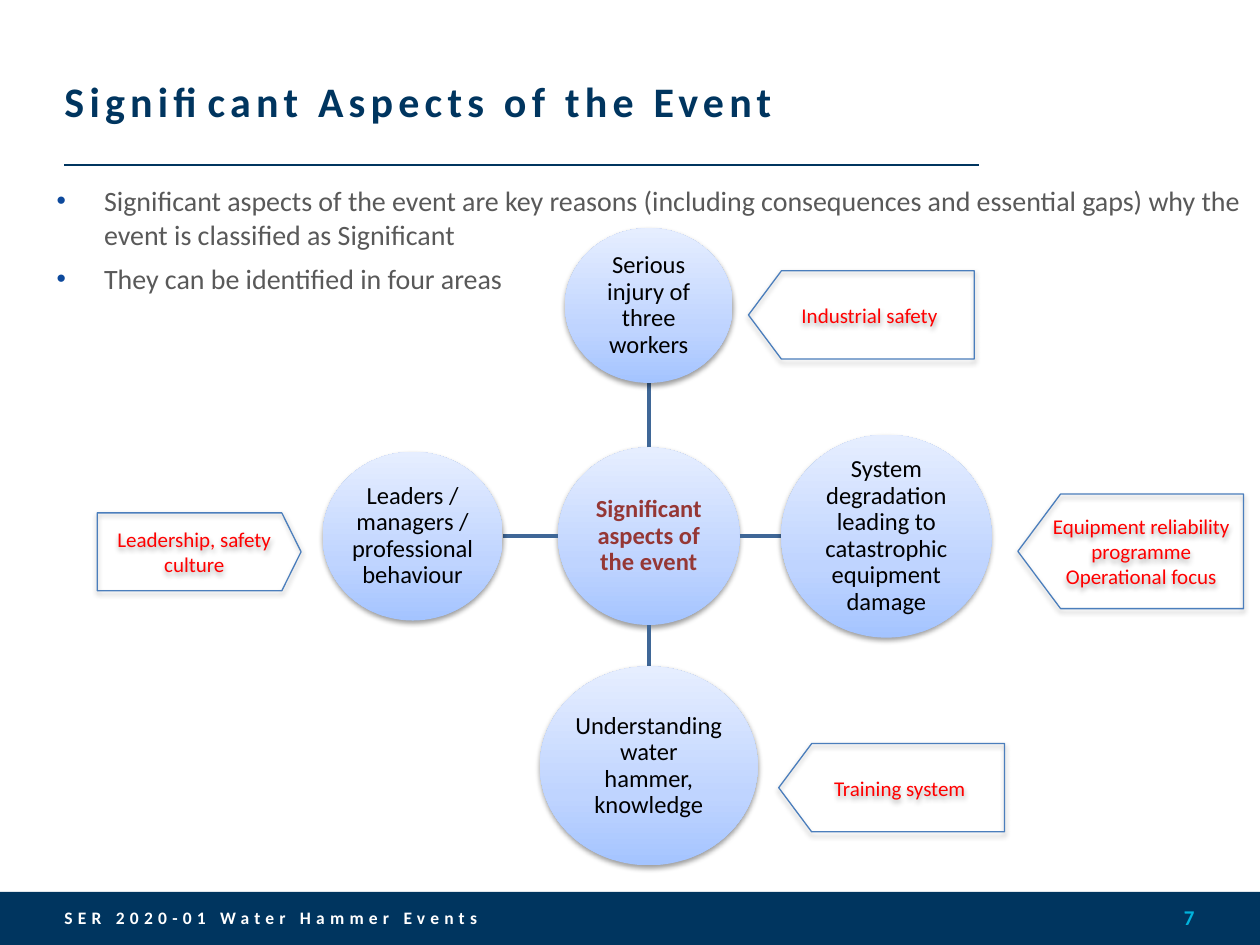
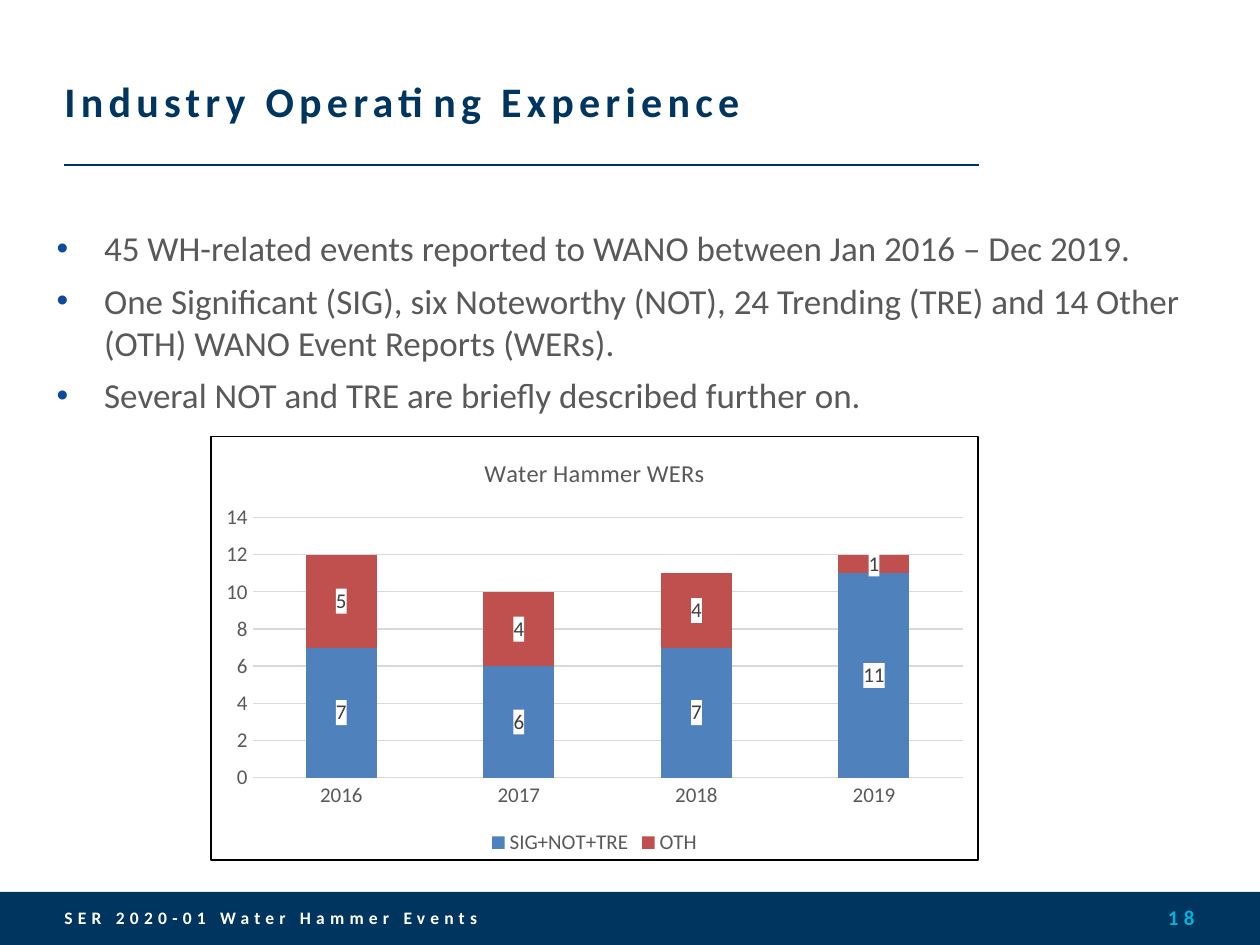
from copy import deepcopy
from dataclasses import dataclass
from math import copysign

from pptx import Presentation
from pptx.chart.data import CategoryChartData
from pptx.dml.color import RGBColor
from pptx.enum.chart import XL_CHART_TYPE, XL_LEGEND_POSITION, XL_TICK_MARK
from pptx.enum.shapes import MSO_CONNECTOR, MSO_SHAPE
from pptx.enum.text import MSO_ANCHOR, PP_ALIGN
from pptx.oxml import parse_xml
from pptx.oxml.ns import nsdecls, qn
from pptx.util import Cm, Pt


@dataclass(frozen=True)
class Style:
    size: float
    ink: str
    bold: bool = False
    track: int = 0
    align: PP_ALIGN = PP_ALIGN.LEFT


@dataclass(frozen=True)
class Theme:
    face: str = "Calibri"
    navy: str = "00355F"
    white: str = "FFFFFF"
    black: str = "000000"
    dot: str = "0D499C"
    spoke: str = "3F6797"
    edge: str = "4B7EBC"
    grid: str = "D9D9D9"
    bars: tuple = ("4F81BD", "C0504D")
    ramp: tuple = ((0, "A4C4FF"), (0.35, "BFD4FF"), (1, "E6EEFF"))
    title: Style = Style(24, "00355F", True, 300)
    foot: Style = Style(10, "FFFFFF", True, 300)
    page: Style = Style(12, "00B3DC", True, 300, PP_ALIGN.RIGHT)
    small: Style = Style(16, "595959")
    large: Style = Style(20, "595959")
    hub: Style = Style(14, "953735", True, align=PP_ALIGN.CENTER)
    node: Style = Style(14, "000000", align=PP_ALIGN.CENTER)
    tag: Style = Style(12, "FF0000", align=PP_ALIGN.CENTER)
    head: Style = Style(14, "595959")
    axis: Style = Style(12, "595959")
    value: Style = Style(12, "404040")


THEME = Theme()


@dataclass(frozen=True)
class Box:
    """Left, top, width and height in centimetres."""
    x: float
    y: float
    w: float
    h: float

    def place(self) -> tuple:
        return Cm(self.x), Cm(self.y), Cm(self.w), Cm(self.h)


@dataclass(frozen=True)
class Node:
    """Circle given by its centre and size in centimetres."""
    text: str
    x: float
    y: float
    w: float
    h: float


@dataclass(frozen=True)
class Tag:
    box: Box
    lines: tuple
    point: float = 0.373
    left: bool = True


FOOT = "SER 2020-01 Water Hammer Events"
BAND = Box(0, 17.98, 25.4, 1.07)

HUB = Node("Significant aspects of the event", 13.08, 10.81, 3.66, 3.58)
NODES = (
    Node("Serious injury of three workers", 13.08, 6.16, 3.38, 3.12),
    Node("System degradation leading to catastrophic equipment damage",
         17.87, 10.81, 4.24, 4.09),
    Node("Understanding water hammer, knowledge", 13.08, 15.44, 4.39, 4.01),
    Node("Leaders / managers / professional behaviour", 8.32, 10.81, 3.63, 3.4),
)
TAGS = (
    Tag(Box(15.09, 5.46, 4.55, 1.78), ("Industrial safety",)),
    Tag(Box(20.52, 9.96, 4.55, 2.31),
        ("Equipment reliability programme", "Operational focus")),
    Tag(Box(15.7, 14.99, 4.55, 1.78), ("Training system",)),
    Tag(Box(1.96, 10.34, 4.11, 1.57), ("Leadership, safety culture",), 0.247, False),
)
ASPECTS = (
    "Significant aspects of the event are key reasons (including consequences "
    "and essential gaps) why the event is classified as Significant",
    "They can be identified in four areas",
)
EVENTS = (
    "45 WH-related events reported to WANO between Jan 2016 – Dec 2019.",
    "One Significant (SIG), six Noteworthy (NOT), 24 Trending (TRE) and "
    "14 Other (OTH) WANO Event Reports (WERs).",
    "Several NOT and TRE are briefly described further on.",
)
YEARS = ("2016", "2017", "2018", "2019")
COUNTS = {"SIG+NOT+TRE": (7, 6, 7, 11), "OTH": (5, 4, 4, 1)}


def tint(code: str) -> RGBColor:
    return RGBColor.from_string(code)


def set_font(font, style: Style) -> None:
    font.name = THEME.face
    font.size = Pt(style.size)
    font.bold = style.bold
    font.color.rgb = tint(style.ink)


def write(frame, lines: tuple, style: Style, inset: float | None = 0) -> None:
    """Fill a text frame; an inset of None keeps the usual margins."""
    frame.word_wrap = True
    frame.vertical_anchor = MSO_ANCHOR.MIDDLE
    if inset is not None:
        frame.margin_left = frame.margin_right = Cm(inset)
        frame.margin_top = frame.margin_bottom = Cm(inset)
    frame.text = "\n".join(lines)
    for para in frame.paragraphs:
        para.alignment = style.align
        for run in para.runs:
            set_font(run.font, style)
            if style.track:
                run.font._element.set("spc", str(style.track))


def add_text(slide, box: Box, lines: tuple, style: Style):
    frame = slide.shapes.add_textbox(*box.place()).text_frame
    write(frame, lines, style)
    return frame


def add_list(slide, box: Box, lines: tuple, style: Style) -> None:
    frame = add_text(slide, box, lines, style)
    frame.vertical_anchor = MSO_ANCHOR.TOP
    for rank, para in enumerate(frame.paragraphs):
        props = para._p.get_or_add_pPr()
        props.set("marL", str(Cm(0.96)))
        props.set("indent", str(-Cm(0.96)))
        for mark in (
            f'<a:buClr {nsdecls("a")}><a:srgbClr val="{THEME.dot}"/></a:buClr>',
            f'<a:buSzPct {nsdecls("a")} val="95000"/>',
            f'<a:buFont {nsdecls("a")} typeface="Arial"/>',
            f'<a:buChar {nsdecls("a")} char="•"/>',
        ):
            props.append(parse_xml(mark))
        para.space_before = Pt(3 if rank else 0)
        para.space_after = Pt(3)


def add_line(slide, start: tuple, end: tuple, code: str, width: float) -> None:
    ends = (Cm(value) for value in (*start, *end))
    line = slide.shapes.add_connector(MSO_CONNECTOR.STRAIGHT, *ends)
    line.line.color.rgb = tint(code)
    line.line.width = Pt(width)
    line._element.spPr.append(parse_xml(f'<a:effectLst {nsdecls("a")}/>'))


def add_shade(shape, alpha: int, drop: float) -> None:
    """Give a shape a soft shadow straight below it."""
    shape.shadow.inherit = False
    shape._element.spPr.find(qn("a:effectLst")).append(parse_xml(
        f'<a:outerShdw {nsdecls("a")} blurRad="{Pt(3.1)}" dist="{Pt(drop)}" '
        f'dir="5400000" rotWithShape="0"><a:srgbClr val="{THEME.black}">'
        f'<a:alpha val="{alpha * 1000}"/></a:srgbClr></a:outerShdw>'))


def add_node(slide, node: Node, style: Style) -> None:
    box = Box(node.x - node.w / 2, node.y - node.h / 2, node.w, node.h)
    disc = slide.shapes.add_shape(MSO_SHAPE.OVAL, *box.place())
    disc.line.fill.background()
    disc.fill.gradient()
    stops = disc._element.spPr.find(".//" + qn("a:gsLst"))
    stops.append(deepcopy(stops[0]))
    for stop, (spot, code) in zip(disc.fill.gradient_stops, THEME.ramp):
        stop.position = spot
        stop.color.rgb = tint(code)
    disc.fill.gradient_angle = 90
    add_shade(disc, 38, 1.6)
    write(disc.text_frame, (node.text,), style, 0.03)
    disc.text_frame.paragraphs[0].line_spacing = 0.9


def add_spoke(slide, hub: Node, node: Node) -> None:
    """Join the facing edges of two circles in one row or column."""
    gap_x, gap_y = node.x - hub.x, node.y - hub.y
    step_x = copysign(0.5, gap_x) if gap_x else 0
    step_y = copysign(0.5, gap_y) if gap_y else 0
    start = (hub.x + step_x * hub.w, hub.y + step_y * hub.h)
    end = (node.x - step_x * node.w, node.y - step_y * node.h)
    add_line(slide, start, end, THEME.spoke, 2)


def add_tag(slide, tag: Tag) -> None:
    plate = slide.shapes.add_shape(MSO_SHAPE.PENTAGON, *tag.box.place())
    plate.adjustments[0] = tag.point
    if tag.left:
        plate._element.spPr.xfrm.set("flipH", "1")
    plate.fill.background()
    plate.line.color.rgb = tint(THEME.edge)
    plate.line.width = Pt(0.75)
    add_shade(plate, 35, 1.8)
    write(plate.text_frame, tag.lines, THEME.tag, None)


def paint(part, line: str = "") -> None:
    """Put a white fill, and a line if asked, behind a chart part."""
    edge = (f'<a:ln w="{Pt(0.75)}"><a:solidFill><a:srgbClr val="{line}"/>'
            "</a:solidFill></a:ln>") if line else ""
    part.find(qn("c:txPr")).addprevious(parse_xml(
        f'<c:spPr {nsdecls("c", "a")}><a:solidFill>'
        f'<a:srgbClr val="{THEME.white}"/></a:solidFill>{edge}</c:spPr>'))


def add_bars(slide, box: Box) -> None:
    data = CategoryChartData()
    data.categories = YEARS
    for name, counts in COUNTS.items():
        data.add_series(name, counts)
    chart = slide.shapes.add_chart(
        XL_CHART_TYPE.COLUMN_STACKED, *box.place(), data).chart
    set_font(chart.font, THEME.axis)
    paint(chart._chartSpace, THEME.black)

    chart.has_title = True
    write_head = chart.chart_title.text_frame
    write_head.text = "Water Hammer WERs"
    set_font(write_head.paragraphs[0].runs[0].font, THEME.head)
    chart.has_legend = True
    chart.legend.position = XL_LEGEND_POSITION.BOTTOM
    chart.legend.include_in_layout = False
    set_font(chart.legend.font, THEME.axis)

    for axis in (chart.category_axis, chart.value_axis):
        axis.major_tick_mark = axis.minor_tick_mark = XL_TICK_MARK.NONE
        axis.format.line.fill.background()
        set_font(axis.tick_labels.font, THEME.axis)
    scale = chart.value_axis
    scale.minimum_scale, scale.maximum_scale, scale.major_unit = 0, 14, 2
    scale.major_gridlines.format.line.color.rgb = tint(THEME.grid)
    scale.major_gridlines.format.line.width = Pt(0.75)

    plot = chart.plots[0]
    plot.gap_width, plot.overlap = 150, 100
    plot.vary_by_categories = False
    for row, code in zip(plot.series, THEME.bars):
        row.format.fill.solid()
        row.format.fill.fore_color.rgb = tint(code)
        labels = row.data_labels
        labels.show_value = True
        set_font(labels.font, THEME.value)
        paint(labels._element)


def add_page(deck, title: str, page: int):
    """Add a slide with the shared title, rule and footer band."""
    slide = deck.slides.add_slide(deck.slide_layouts[6])
    band = slide.shapes.add_shape(MSO_SHAPE.RECTANGLE, *BAND.place())
    band.shadow.inherit = False
    band.fill.solid()
    band.fill.fore_color.rgb = tint(THEME.navy)
    band.line.fill.background()
    add_line(slide, (1.3, 3.33), (19.74, 3.33), THEME.navy, 1)
    add_text(slide, Box(1.3, 0.86, 18.42, 2.36), (title,), THEME.title)
    add_text(slide, Box(1.3, 17.96, 20.7, 1.07), (FOOT,), THEME.foot)
    add_text(slide, Box(22, 17.93, 2.08, 1.12), (str(page),), THEME.page)
    return slide


def main() -> None:
    deck = Presentation()
    deck.slide_width, deck.slide_height = Cm(25.4), Cm(19.05)

    slide = add_page(deck, "Significant Aspects of the Event", 7)
    add_list(slide, Box(1.14, 3.71, 23.9, 3.58), ASPECTS, THEME.small)
    add_node(slide, HUB, THEME.hub)
    for node in NODES:
        add_spoke(slide, HUB, node)
        add_node(slide, node, THEME.node)
    for tag in TAGS:
        add_tag(slide, tag)

    slide = add_page(deck, "Industry Operating Experience", 18)
    add_list(slide, Box(1.14, 4.57, 22.94, 12.6), EVENTS, THEME.large)
    add_bars(slide, Box(4.24, 8.79, 15.49, 8.56))

    deck.save("out.pptx")


if __name__ == "__main__":
    main()
